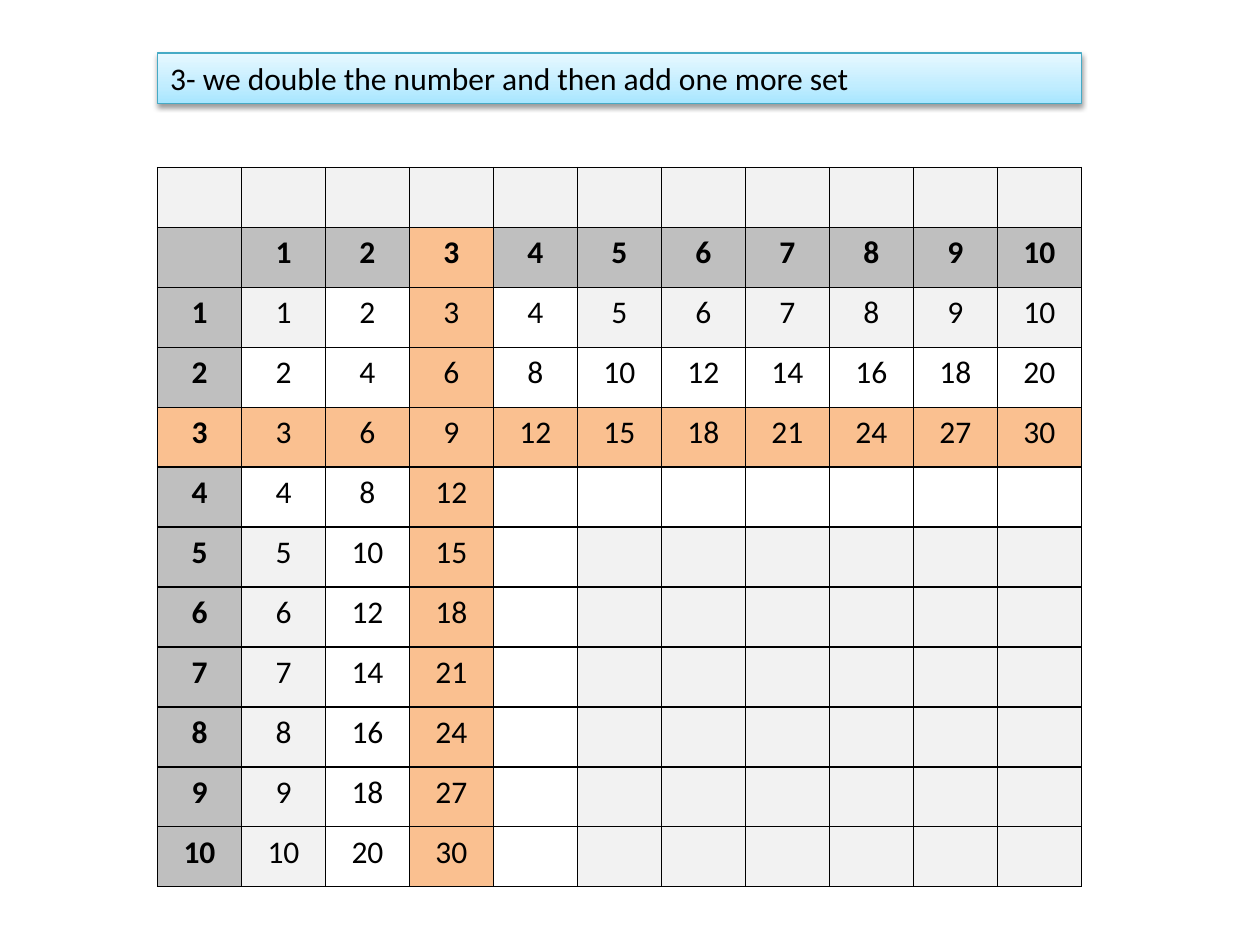
from dataclasses import dataclass
from lxml.etree import SubElement
from pptx import Presentation
from pptx.dml.color import RGBColor
from pptx.enum.text import MSO_ANCHOR, MSO_AUTO_SIZE, PP_ALIGN
from pptx.oxml.ns import qn
from pptx.util import Inches, Pt


@dataclass(frozen=True)
class Theme:
    """Colours and type sizes of the slide."""
    font: str = "Calibri"
    size: int = 18
    ink: str = "000000"
    header: str = "BFBFBF"
    highlight: str = "FAC090"
    known: str = "FFFFFF"
    plain: str = "F2F2F2"
    title_line: str = "46AAC5"
    title_stops: tuple = ((0, "A7E6FF"), (35, "C1EDFF"), (100, "E7F8FF"))


def add_node(parent, tag, **attributes):
    """Append a drawing element and return it."""
    return SubElement(parent, qn(f"a:{tag}"), {key: str(value) for key, value in attributes.items()})


class SlideBuilder:
    """Holds the theme and the current slide."""

    def __init__(self, deck, theme):
        """Start a title-only slide."""
        self.theme = theme
        self.width, self.height = deck.slide_width, deck.slide_height
        self.slide = deck.slides.add_slide(deck.slide_layouts[5])

    def frame(self, left, top, width, height):
        """Turn shares of the slide into lengths."""
        return (round(left * self.width), round(top * self.height),
                round(width * self.width), round(height * self.height))

    def add_text(self, text_frame, text, align, bold=False):
        """Add one formatted run."""
        para = text_frame.paragraphs[0]
        para.alignment = align
        span = para.add_run()
        span.text = text
        span.font.name = self.theme.font
        span.font.size = Pt(self.theme.size)
        span.font.bold = bold
        span.font.color.rgb = RGBColor.from_string(self.theme.ink)

    def title(self, text, area):
        """Place the title on a shaded banner."""
        box = self.slide.shapes.title
        box.left, box.top, box.width, box.height = self.frame(*area)
        properties = box._element.spPr
        gradient = add_node(properties, "gradFill", rotWithShape=1)
        stops = add_node(gradient, "gsLst")
        for position, color in self.theme.title_stops:
            add_node(add_node(stops, "gs", pos=position * 1000), "srgbClr", val=color)
        add_node(gradient, "lin", ang=270 * 60000, scaled=0)
        box.line.color.rgb = RGBColor.from_string(self.theme.title_line)
        box.line.width = Pt(0.75)
        shadow = add_node(add_node(properties, "effectLst"), "outerShdw", blurRad=Pt(3.1),
                          dist=Pt(1.6), dir=90 * 60000, rotWithShape=0)
        add_node(add_node(shadow, "srgbClr", val=self.theme.ink), "alpha", val=38000)
        box.text_frame.word_wrap = True
        box.text_frame.auto_size = MSO_AUTO_SIZE.NONE
        box.text_frame.vertical_anchor = MSO_ANCHOR.TOP
        self.add_text(box.text_frame, text, PP_ALIGN.LEFT)

    def cell(self, cell, text, fill, bold):
        """Border, fill and label one table cell."""
        for side in ("lnL", "lnR", "lnT", "lnB"):
            border = add_node(cell._tc.get_or_add_tcPr(), side, w=Pt(1))
            add_node(add_node(border, "solidFill"), "srgbClr", val=self.theme.ink)
        cell.fill.solid()
        cell.fill.fore_color.rgb = RGBColor.from_string(fill)
        if text:
            self.add_text(cell.text_frame, text, PP_ALIGN.CENTER, bold)

    def cell_color(self, row, column, factor):
        """Choose the fill from the two factors of a cell."""
        if row < 0:
            return self.theme.plain
        if factor in (row, column):
            return self.theme.highlight
        if 0 in (row, column):
            return self.theme.header
        if {row, column} & {factor - 1, factor + 1}:
            return self.theme.known
        return self.theme.plain

    def times_table(self, factor, last, area):
        """Draw the products up to the given factor under a blank row."""
        rows, columns = last + 2, last + 1
        left, top, width, height = self.frame(*area)
        table = self.slide.shapes.add_table(rows, columns, left, top, width, height).table
        for band in table.columns:
            band.width = round(width / columns)
        for band in table.rows:
            band.height = round(height / rows)
        for row in range(-1, last + 1):
            for column in range(columns):
                heading = 0 in (row, column)
                value = row + column if heading else row * column
                shown = row >= 0 and value > 0 and min(row, column) <= factor
                self.cell(table.cell(row + 1, column), str(value) if shown else "",
                          self.cell_color(row, column, factor), heading)


def main():
    """Build the multiplication slide."""
    deck = Presentation()
    deck.slide_width, deck.slide_height = Inches(10), Inches(7.5)
    builder = SlideBuilder(deck, Theme())
    left, width = 1 / 8, 11 / 15
    builder.title("3- we double the number and then add one more set", (left, 0.42 / 7.5, width, 0.4 / 7.5))
    builder.times_table(3, 10, (left, 1.33 / 7.5, width, 5.71 / 7.5))
    deck.save("out.pptx")


if __name__ == "__main__":
    main()
